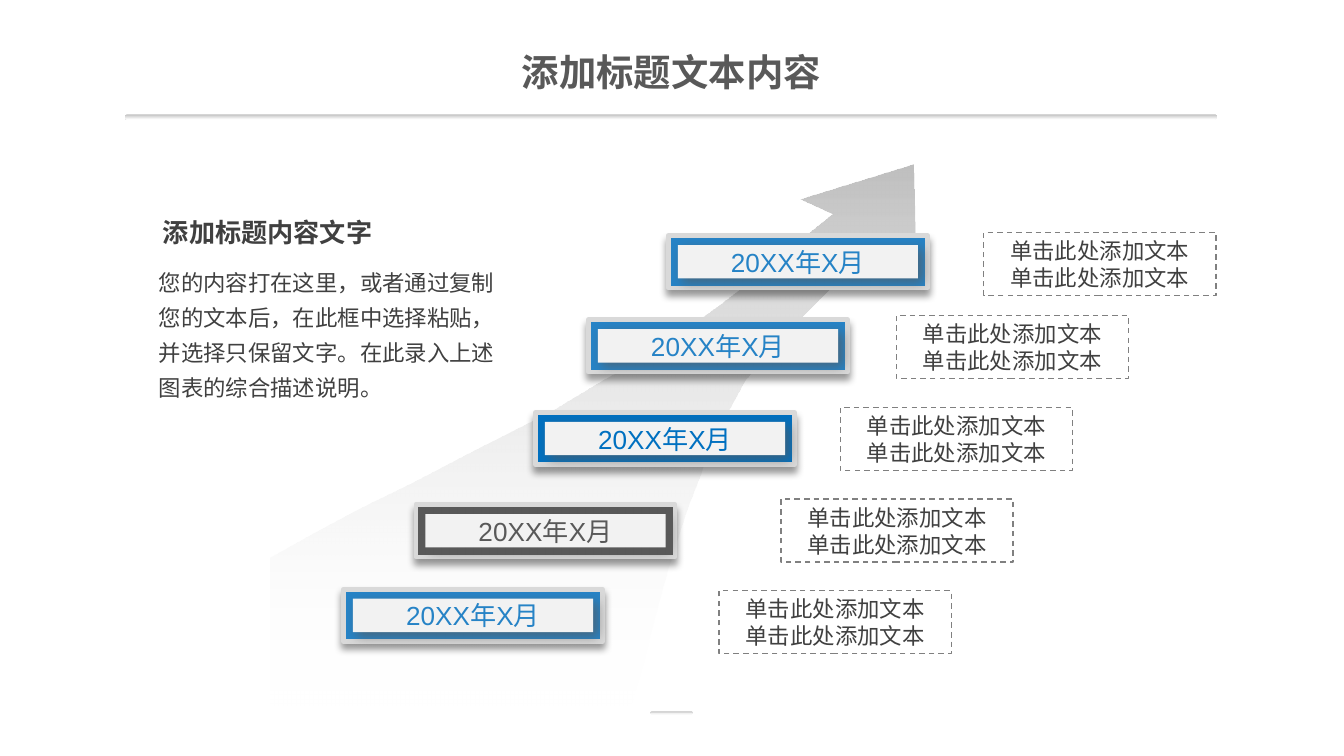
"""Build a slide with a rising arrow, five dated milestones and their notes."""
import lxml.etree
import pptx
import pptx.dml.color
import pptx.enum.dml
import pptx.enum.shapes
import pptx.enum.text
import pptx.oxml.ns
import pptx.util

Cm, Pt = pptx.util.Cm, pptx.util.Pt
SHAPES = pptx.enum.shapes.MSO_SHAPE
ANCHOR = pptx.enum.text.MSO_ANCHOR
ALIGN = pptx.enum.text.PP_ALIGN
qn = pptx.oxml.ns.qn

COLORS = {
    "white": "FFFFFF", "black": "000000", "silver": "BFBFBF", "rim": "D9D9D9",
    "panel": "F2F2F2", "dash": "808080", "text": "404040", "gray": "595959",
    "blue": "2683C6", "deep blue": "0070C0",
}
CHINESE_FONT = "Noto Sans CJK SC"
TITLE = "添加标题文本内容"
HEADING = "添加标题内容文字"
BODY = "您的内容打在这里，或者通过复制您的文本后，在此框中选择粘贴，并选择只保留文字。在此录入上述图表的综合描述说明。"
DATE = "20XX年X月"
NOTE = ["单击此处添加文本", "单击此处添加文本"]
MILESTONES = [
    {"color": "blue", "badge": (6.49, 11.13), "note": (13.59, 11.16)},
    {"color": "gray", "badge": (7.86, 9.53), "note": (14.76, 9.43)},
    {"color": "deep blue", "badge": (10.12, 7.79), "note": (15.88, 7.7)},
    {"color": "blue", "badge": (11.12, 6.04), "note": (16.94, 5.96)},
    {"color": "blue", "badge": (12.63, 4.45), "note": (18.59, 4.39)},
]
BADGE_SIZE, BADGE_INSET, NOTE_SIZE = (4.9, 0.99), 0.18, (4.39, 1.19)
RULES = [(2.36, 2.16, 20.65, 0.1), (12.29, 13.44, 0.81, 0.05)]
ARROW = [
    (5.11, 10.52), (5.97, 10.03), (6.83, 9.58), (7.77, 9.12), (8.94, 8.51),
    (10.39, 7.77), (11.33, 7.21), (11.96, 6.86), (12.83, 6.3), (13.61, 5.74),
    (14.33, 5.18), (14.88, 4.72), (15.72, 4.04), (15.11, 3.76), (17.25, 3.1),
    (17.3, 4.95), (16.64, 4.52), (15.8, 5.33), (14.78, 6.35), (14.07, 7.19),
    (13.74, 7.8), (13.41, 8.43), (13.21, 9.02), (13, 9.55), (12.65, 10.62),
    (12.37, 11.63), (12.17, 12.45), (11.91, 13.36), (5.11, 13.36),
]


def rgb(name):
    return pptx.dml.color.RGBColor.from_string(COLORS[name])


def write(shape, lines, size, color, font=CHINESE_FONT, bold=False,
          align=ALIGN.CENTER, anchor=ANCHOR.MIDDLE, margins=(0.18, 0.1)):
    frame = shape.text_frame
    frame.word_wrap = True
    frame.auto_size = pptx.enum.text.MSO_AUTO_SIZE.NONE
    frame.vertical_anchor = anchor
    frame.margin_left = frame.margin_right = Cm(margins[0])
    frame.margin_top = frame.margin_bottom = Cm(margins[1])
    for index, line in enumerate(lines):
        paragraph = frame.add_paragraph() if index else frame.paragraphs[0]
        paragraph.alignment = align
        run = paragraph.add_run()
        run.text = line
        run.font.size, run.font.bold, run.font.name = Pt(size), bold, font
        run.font.color.rgb = rgb(color)
        properties = run.font._element
        lxml.etree.SubElement(properties, qn("a:ea"), typeface=CHINESE_FONT)
    return frame


def add_box(shapes, kind, left, top, width, height, fill=None):
    shape = shapes.add_shape(kind, Cm(left), Cm(top), Cm(width), Cm(height))
    shape.shadow.inherit = False
    shape.line.fill.background()
    if fill:
        shape.fill.solid()
        shape.fill.fore_color.rgb = rgb(fill)
    else:
        shape.fill.background()
    return shape


def fade(shape, end_alpha=100):
    shape.fill.gradient()
    shape.fill.gradient_angle = 270
    for stop, color in zip(shape.fill.gradient_stops, ("silver", "white")):
        stop.color.rgb = rgb(color)
    end = list(shape._element.spPr.iter(qn("a:srgbClr")))[-1]
    lxml.etree.SubElement(end, qn("a:alpha"), val=str(end_alpha * 1000))


def cast_shadow(shape, color, alpha, blur, distance, angle):
    effects = shape._element.spPr.find(qn("a:effectLst"))
    shadow = lxml.etree.SubElement(
        effects, qn("a:outerShdw"), blurRad=str(Pt(blur)), dist=str(Pt(distance)),
        dir=str(angle * 60000), algn="ctr", rotWithShape="0")
    tint = lxml.etree.SubElement(shadow, qn("a:srgbClr"), val=COLORS[color])
    lxml.etree.SubElement(tint, qn("a:alpha"), val=str(alpha * 1000))


def add_arrow(slide):
    points = [(Cm(x), Cm(y)) for x, y in ARROW]
    builder = slide.shapes.build_freeform(*points[0])
    builder.add_line_segments(points[1:], close=True)
    arrow = builder.convert_to_shape()
    arrow.shadow.inherit = False
    arrow.line.fill.background()
    fade(arrow, end_alpha=0)


def add_note(slide, left, top):
    note = add_box(slide.shapes, SHAPES.RECTANGLE, left, top, *NOTE_SIZE)
    note.line.color.rgb = rgb("dash")
    note.line.width = Pt(0.75)
    note.line.dash_style = pptx.enum.dml.MSO_LINE.DASH
    write(note, NOTE, 12, "text", margins=(0.18, 0.08))


def add_badge(slide, left, top, color):
    group = slide.shapes.add_group_shape()
    width, height = BADGE_SIZE
    frame = add_box(group.shapes, SHAPES.RECTANGLE, left, top, width, height, color)
    frame.line.color.rgb = rgb("rim")
    frame.line.width = Pt(2.5)
    cast_shadow(frame, "black", 40, 4, 3, 90)
    panel = add_box(group.shapes, SHAPES.RECTANGLE, left + BADGE_INSET, top + BADGE_INSET,
                    width - 2 * BADGE_INSET, height - 2 * BADGE_INSET, "panel")
    cast_shadow(panel, "gray", 64, 6, 3, 45)
    write(panel, [DATE], 14, color, font="Arial", margins=(0, 0))


def add_text(slide, left, top, width, height):
    return slide.shapes.add_textbox(Cm(left), Cm(top), Cm(width), Cm(height))


def main():
    presentation = pptx.Presentation()
    presentation.slide_width, presentation.slide_height = Cm(25.4), Cm(14.28)
    slide = presentation.slides.add_slide(presentation.slide_layouts[5])
    title = slide.shapes.title
    title.left, title.top, title.width, title.height = Cm(7.8), Cm(0.84), Cm(9.78), Cm(1.04)
    write(title, [TITLE], 20, "gray", font="Arial", bold=True)
    for place in RULES:
        rule = add_box(slide.shapes, SHAPES.ROUNDED_RECTANGLE, *place)
        rule.adjustments[0] = 0.5
        fade(rule)
    add_arrow(slide)
    for milestone in MILESTONES:
        add_note(slide, *milestone["note"])
    body = write(add_text(slide, 2.82, 4.83, 7.06, 2.51), [BODY], 12, "text",
                 align=ALIGN.LEFT, anchor=ANCHOR.TOP)
    body.paragraphs[0].line_spacing = 1.3
    body.paragraphs[0].space_before = Pt(10)
    write(add_text(slide, 2.9, 3.78, 6.02, 1.22), [HEADING], 14, "text",
          bold=True, align=ALIGN.LEFT)
    for milestone in MILESTONES:
        add_badge(slide, *milestone["badge"], milestone["color"])
    presentation.save("out.pptx")


if __name__ == "__main__":
    main()
